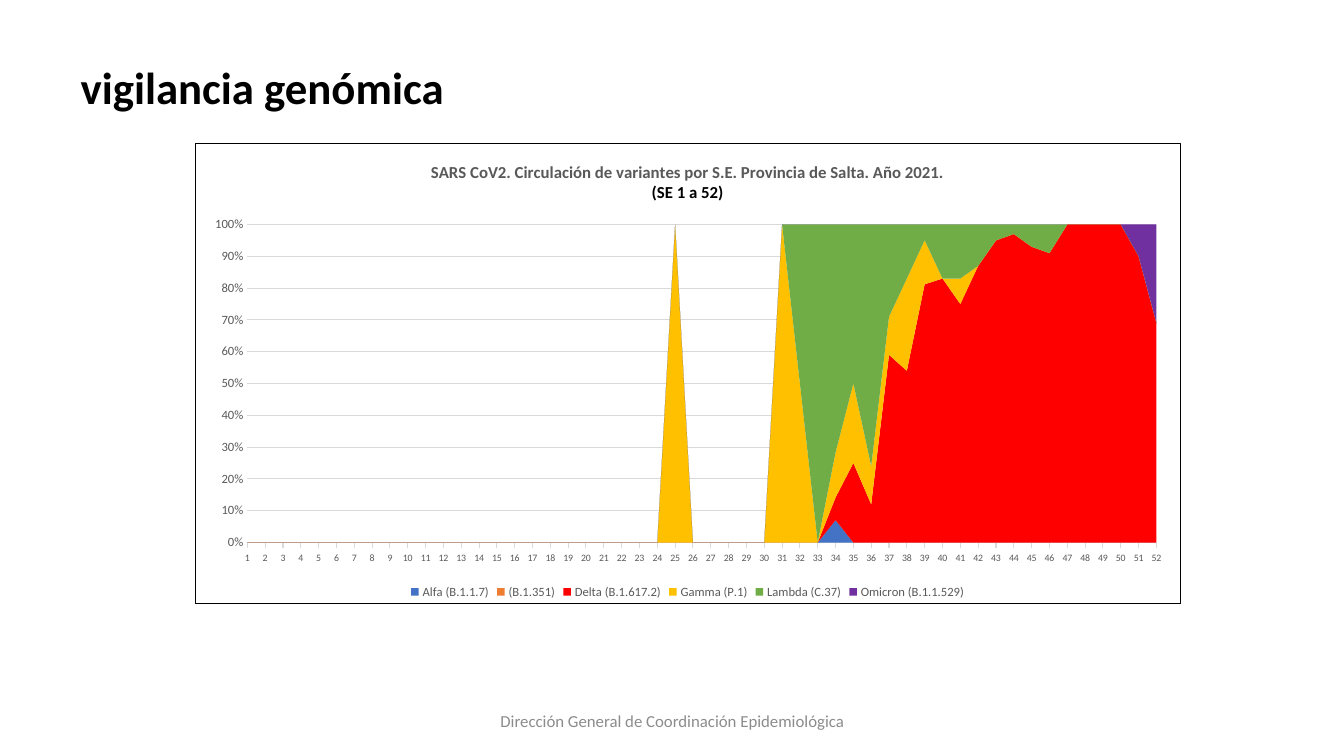
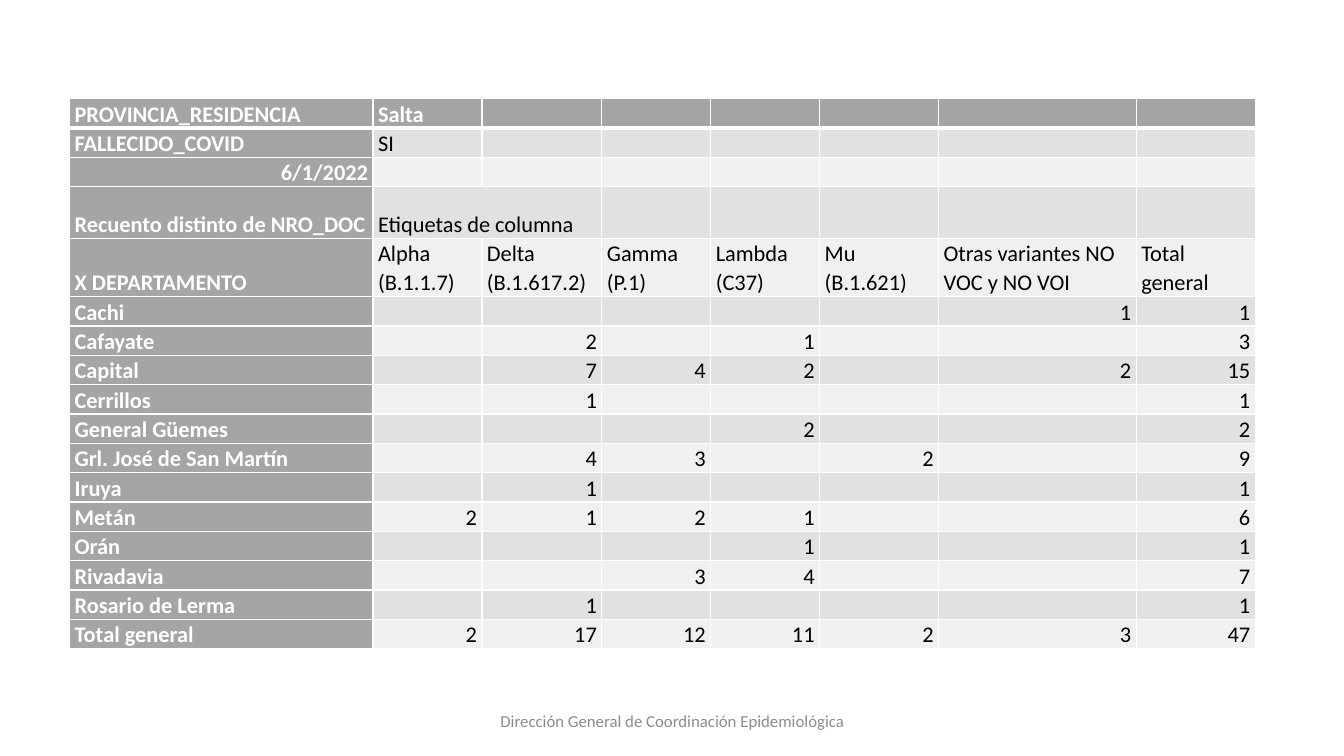
from copy import deepcopy

from lxml import etree
from pptx import Presentation
from pptx.chart.data import CategoryChartData
from pptx.dml.color import RGBColor
from pptx.enum.chart import XL_CHART_TYPE, XL_LEGEND_POSITION, XL_TICK_MARK
from pptx.enum.shapes import PP_PLACEHOLDER
from pptx.enum.text import MSO_ANCHOR, MSO_AUTO_SIZE, PP_ALIGN
from pptx.oxml import parse_xml
from pptx.oxml.ns import nsdecls, qn
from pptx.util import Inches, Pt

AREA_100 = XL_CHART_TYPE.AREA_STACKED_100
LEGEND_BOTTOM = XL_LEGEND_POSITION.BOTTOM
TICK_NONE, TICK_OUT = XL_TICK_MARK.NONE, XL_TICK_MARK.OUTSIDE
FOOTER_TYPE = PP_PLACEHOLDER.FOOTER
TOP, MIDDLE, BOTTOM = MSO_ANCHOR.TOP, MSO_ANCHOR.MIDDLE, MSO_ANCHOR.BOTTOM
LEFT, CENTER, RIGHT = PP_ALIGN.LEFT, PP_ALIGN.CENTER, PP_ALIGN.RIGHT
NO_AUTOFIT = MSO_AUTO_SIZE.NONE

FONT = "Calibri"
BLACK = RGBColor(0x00, 0x00, 0x00)
WHITE = RGBColor(0xFF, 0xFF, 0xFF)
FOOTER_GRAY = RGBColor(0x8C, 0x8C, 0x8C)
LABEL_GRAY = RGBColor(0x59, 0x59, 0x59)
GRID_GRAY = RGBColor(0xD9, 0xD9, 0xD9)
HEADER_GRAY = RGBColor(0xA5, 0xA5, 0xA5)
BAND_DARK = RGBColor(0xE1, 0xE1, 0xE1)
BAND_LIGHT = RGBColor(0xF0, 0xF0, 0xF0)
BLUE = RGBColor(0x44, 0x72, 0xC4)
ORANGE = RGBColor(0xED, 0x7D, 0x31)
RED = RGBColor(0xFF, 0x00, 0x00)
YELLOW = RGBColor(0xFF, 0xC0, 0x00)
GREEN = RGBColor(0x70, 0xAD, 0x47)
PURPLE = RGBColor(0x70, 0x30, 0xA0)

TITLE = "vigilancia genómica"
FOOTER = "Dirección General de Coordinación Epidemiológica"
CHART_TITLE = [
    ("SARS CoV2. Circulación de variantes por S.E. Provincia de Salta. Año 2021.", LABEL_GRAY),
    ("(SE 1 a 52)", BLACK),
]
WEEKS = 52
# Variant, colour, first week with cases, weekly percentages from then on
VARIANTS = [
    ("Alfa (B.1.1.7)", BLUE, 34, [7]),
    ("(B.1.351)", ORANGE, 1, []),
    ("Delta (B.1.617.2)", RED, 34,
     [7, 25, 12, 59, 54, 82, 83, 75, 87, 95, 97, 93, 91, 100, 100, 100, 100, 90, 69]),
    ("Gamma (P.1)", YELLOW, 25,
     [100, 0, 0, 0, 0, 0, 100, 50, 0, 14, 25, 12, 12, 29, 14, 0, 8]),
    ("Lambda (C.37)", GREEN, 32,
     [50, 100, 71, 50, 76, 29, 17, 5, 17, 17, 13, 5, 3, 7, 9]),
    ("Omicron (B.1.1.529)", PURPLE, 51, [10, 31]),
]

BLANK = ""
DEATHS = [
    ["PROVINCIA_RESIDENCIA", "Salta"],
    ["FALLECIDO_COVID", "SI"],
    ["6/1/2022"],
    ["Recuento distinto de NRO_DOC", "Etiquetas de columna"],
    ["X DEPARTAMENTO", "Alpha (B.1.1.7)", "Delta (B.1.617.2)", "Gamma (P.1)", "Lambda (C37)",
     "Mu (B.1.621)", "Otras variantes NO VOC y NO VOI", "Total general"],
    ["Cachi", BLANK, BLANK, BLANK, BLANK, BLANK, 1, 1],
    ["Cafayate", BLANK, 2, BLANK, 1, BLANK, BLANK, 3],
    ["Capital", BLANK, 7, 4, 2, BLANK, 2, 15],
    ["Cerrillos", BLANK, 1, BLANK, BLANK, BLANK, BLANK, 1],
    ["General Güemes", BLANK, BLANK, BLANK, 2, BLANK, BLANK, 2],
    ["Grl. José de San Martín", BLANK, 4, 3, BLANK, 2, BLANK, 9],
    ["Iruya", BLANK, 1, BLANK, BLANK, BLANK, BLANK, 1],
    ["Metán", 2, 1, 2, 1, BLANK, BLANK, 6],
    ["Orán", BLANK, BLANK, BLANK, 1, BLANK, BLANK, 1],
    ["Rivadavia", BLANK, BLANK, 3, 4, BLANK, BLANK, 7],
    ["Rosario de Lerma", BLANK, 1, BLANK, BLANK, BLANK, BLANK, 1],
    ["Total general", 2, 17, 12, 11, 2, 3, 47],
]
COLUMN_WIDTHS = [3.01, 1.08, 1.19, 1.08, 1.08, 1.18, 1.96, 1.18]
ROW_HEIGHT, TALL_ROW_HEIGHT = 0.25, 0.51
TALL_ROWS = (3, 4)
COLUMN_LABELS_ROW = 3
CELL_TEXT_SIZE = 16
CELL_FORMAT = {
    "margin_left": Inches(0.05), "margin_right": Inches(0.05),
    "margin_top": 0, "margin_bottom": 0, "vertical_anchor": BOTTOM,
}


def box(left, top, width, height):
    return [Inches(side) for side in (left, top, width, height)]


def set_format(target, values):
    for name, value in values.items():
        setattr(target, name, value)


def set_font(font, size, color, bold=False):
    set_format(font, {"name": FONT, "size": Pt(size), "bold": bold})
    font.color.rgb = color


def fill_placeholder(shape, text, place, anchor, align, size, color, bold=False):
    set_format(shape, dict(zip(("left", "top", "width", "height"), box(*place))))
    frame = shape.text_frame
    frame.text = text
    set_format(frame, {"word_wrap": True, "auto_size": NO_AUTOFIT, "vertical_anchor": anchor})
    paragraph = frame.paragraphs[0]
    paragraph.alignment = align
    set_font(paragraph.runs[0].font, size, color, bold)


def add_footer(slide):
    """Bring the layout's footer placeholder onto the slide."""
    source = next(p for p in slide.slide_layout.placeholders
                  if p.placeholder_format.type == FOOTER_TYPE)
    slide.shapes._spTree.append(deepcopy(source._element))
    fill_placeholder(slide.shapes[-1], FOOTER, (4.42, 6.95, 4.5, 0.4),
                     MIDDLE, CENTER, 12, FOOTER_GRAY)


def set_plot_layout(chart, x, y, w, h):
    """Fix the inner plot area, as fractions of the chart."""
    plot_area = chart._chartSpace.chart.plotArea
    for old in plot_area.findall(qn("c:layout")):
        plot_area.remove(old)
    sizes = "".join(f'<c:{name} val="{value}"/>' for name, value in zip("xywh", (x, y, w, h)))
    plot_area.insert(0, parse_xml(
        f'<c:layout {nsdecls("c")}><c:manualLayout><c:layoutTarget val="inner"/>'
        f'<c:xMode val="edge"/><c:yMode val="edge"/>{sizes}</c:manualLayout></c:layout>'))


def set_chart_border(chart, color, width):
    chart._chartSpace.find(qn("c:txPr")).addprevious(parse_xml(
        f'<c:spPr {nsdecls("c", "a")}><a:solidFill><a:srgbClr val="{WHITE}"/></a:solidFill>'
        f'<a:ln w="{Pt(width)}"><a:solidFill><a:srgbClr val="{color}"/></a:solidFill></a:ln>'
        '</c:spPr>'))


def format_axes(chart):
    weeks, share = chart.category_axis, chart.value_axis
    set_format(weeks, {"major_tick_mark": TICK_OUT, "minor_tick_mark": TICK_NONE,
                       "has_major_gridlines": False})
    set_format(share, {"major_tick_mark": TICK_NONE, "minor_tick_mark": TICK_NONE,
                       "has_major_gridlines": True})
    set_format(share.tick_labels, {"number_format": "0%", "number_format_is_linked": False})
    set_font(weeks.tick_labels.font, 7, LABEL_GRAY)
    set_font(share.tick_labels.font, 9, LABEL_GRAY)
    for line in (weeks.format.line, share.major_gridlines.format.line):
        line.color.rgb = GRID_GRAY
        line.width = Pt(0.75)
    share.format.line.fill.background()
    for crossing in chart._chartSpace.iter(qn("c:crossBetween")):
        crossing.set("val", "midCat")


def add_variant_chart(slide):
    data = CategoryChartData()
    data.categories = [str(week) for week in range(1, WEEKS + 1)]
    for name, _, first_week, shares in VARIANTS:
        before = [0] * (first_week - 1)
        after = [0] * (WEEKS - len(before) - len(shares))
        data.add_series(name, before + shares + after)
    chart = slide.shapes.add_chart(AREA_100, *box(1.93, 1.42, 9.78, 4.57), data).chart
    set_font(chart.font, 10, BLACK)
    set_chart_border(chart, BLACK, 0.75)

    title_frame = chart.chart_title.text_frame
    title_frame.text = "\n".join(text for text, _ in CHART_TITLE)
    for paragraph, (_, color) in zip(title_frame.paragraphs, CHART_TITLE):
        set_font(paragraph.runs[0].font, 12, color, True)
    chart.chart_title.include_in_layout = False

    chart.has_legend = True
    set_format(chart.legend, {"position": LEGEND_BOTTOM, "include_in_layout": False})
    set_font(chart.legend.font, 9, LABEL_GRAY)

    chart.plots[0].vary_by_categories = False
    for series, (_, color, _, _) in zip(chart.plots[0].series, VARIANTS):
        series.format.fill.solid()
        series.format.fill.fore_color.rgb = color
    format_axes(chart)
    set_plot_layout(chart, 0.053, 0.176, 0.923, 0.692)


def set_cell_borders(cell, bottom_width):
    properties = cell._tc.get_or_add_tcPr()
    widths = {"lnL": 1, "lnR": 1, "lnT": 1, "lnB": bottom_width}
    for position, (side, width) in enumerate(widths.items()):
        properties.insert(position, parse_xml(
            f'<a:{side} {nsdecls("a")} w="{Pt(width)}"><a:solidFill>'
            f'<a:srgbClr val="{WHITE}"/></a:solidFill></a:{side}>'))


def fill_cell(cell, text, is_header, fill_color):
    set_format(cell, CELL_FORMAT)
    cell.fill.solid()
    cell.fill.fore_color.rgb = fill_color
    paragraph = cell.text_frame.paragraphs[0]
    if not text:
        # The end mark keeps an empty cell as low as its row
        etree.SubElement(paragraph._p, qn("a:endParaRPr"), sz=str(CELL_TEXT_SIZE * 100))
        return
    run = paragraph.add_run()
    run.text = text
    set_font(run.font, CELL_TEXT_SIZE, WHITE if is_header else BLACK, is_header)
    set_format(paragraph, {"alignment": RIGHT if text[0].isdigit() else LEFT,
                           "line_spacing": 1.07, "space_after": Pt(8)})


def add_deaths_table(slide):
    heights = [TALL_ROW_HEIGHT if row in TALL_ROWS else ROW_HEIGHT for row in range(len(DEATHS))]
    place = box(0.69, 0.98, sum(COLUMN_WIDTHS), sum(heights))
    table = slide.shapes.add_table(len(DEATHS), len(COLUMN_WIDTHS), *place).table
    for column, width in zip(table.columns, COLUMN_WIDTHS):
        column.width = Inches(width)
    for row, height in zip(table.rows, heights):
        row.height = Inches(height)
    for r, values in enumerate(DEATHS):
        band = BAND_DARK if r % 2 else BAND_LIGHT
        for c in range(len(COLUMN_WIDTHS)):
            is_header = r == 0 or c == 0
            text = str(values[c]) if c < len(values) else BLANK
            cell = table.cell(r, c)
            fill_cell(cell, text, is_header, HEADER_GRAY if is_header else band)
            set_cell_borders(cell, 3 if r == 0 else 1)
    table.cell(COLUMN_LABELS_ROW, 1).merge(table.cell(COLUMN_LABELS_ROW, 2))


def main():
    deck = Presentation()
    deck.slide_width, deck.slide_height = Inches(13.33), Inches(7.5)
    title_only, blank = deck.slide_layouts[5], deck.slide_layouts[6]

    variants_slide = deck.slides.add_slide(title_only)
    fill_placeholder(variants_slide.shapes.title, TITLE, (0.7, 0.54, 4.08, 0.64),
                     TOP, LEFT, 32, BLACK, True)
    add_variant_chart(variants_slide)
    add_footer(variants_slide)

    deaths_slide = deck.slides.add_slide(blank)
    add_footer(deaths_slide)
    add_deaths_table(deaths_slide)

    deck.save("out.pptx")


if __name__ == "__main__":
    main()
